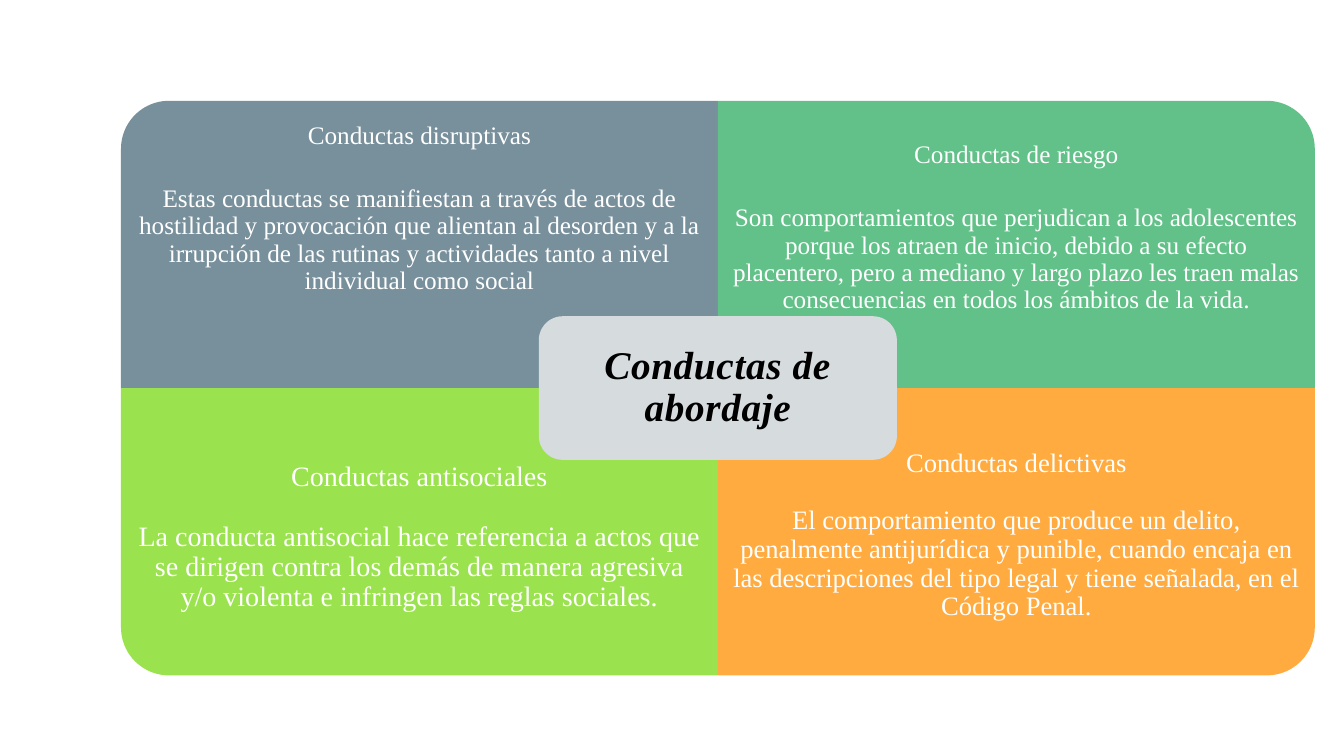
"""Build a slide with four kinds of conduct around a central title."""
import pptx
import pptx.dml.color
import pptx.enum.shapes
import pptx.enum.text
import pptx.util

SLIDE_WIDTH, SLIDE_HEIGHT = 13.33, 7.5
GRID_LEFT, GRID_TOP = 1.2, 1.0
CELL_WIDTH, CELL_HEIGHT = 5.92, 2.85
TEXT_SHARE = 0.75
CENTER_SHARES = (0.6, 0.5)
FONT = "Times New Roman"

CENTER = {"heading": "Conductas de abordaje", "fill": "D6DBDE", "size": 28}
CONDUCTS = [
    {"heading": "Conductas disruptivas",
     "body": "Estas conductas se manifiestan a través de actos de hostilidad y provocación que "
             "alientan al desorden y a la irrupción de las rutinas y actividades tanto a nivel "
             "individual como social",
     "cell": (0, 0), "turn": 270, "fill": "78909C",
     "size": 18, "gap": 26, "inset": 0.14, "shift": 0},
    {"heading": "Conductas de riesgo",
     "body": "Son comportamientos que perjudican a los adolescentes porque los atraen de inicio, "
             "debido a su efecto placentero, pero a mediano y largo plazo les traen malas "
             "consecuencias en todos los ámbitos de la vida.",
     "cell": (1, 0), "turn": 0, "fill": "61C188",
     "size": 18, "gap": 26, "inset": 0.14, "shift": 0.19},
    {"heading": "Conductas antisociales",
     "body": "La conducta antisocial hace referencia a actos que se dirigen contra los demás de "
             "manera agresiva y/o violenta e infringen las reglas sociales.",
     "cell": (0, 1), "turn": 180, "fill": "9BE24F",
     "size": 20, "gap": 21.5, "inset": 0.16, "shift": -0.3},
    {"heading": "Conductas delictivas",
     "body": "El comportamiento que produce un delito, penalmente antijurídica y punible, cuando "
             "encaja en las descripciones del tipo legal y tiene señalada, en el Código Penal.",
     "cell": (1, 1), "turn": 90, "fill": "FFAB40",
     "size": 19, "gap": 20.5, "inset": 0.15, "shift": -0.32},
]


def color(code):
    return pptx.dml.color.RGBColor.from_string(code)


def apply(target, formats):
    for name, value in formats.items():
        setattr(target, name, value)


def box(left, top, width, height):
    return [pptx.util.Inches(length) for length in (left, top, width, height)]


def add_panel(slide, preset, place, fill, turn=0):
    left, top, width, height = place
    if turn % 180:
        left, top = left + (width - height) / 2, top + (height - width) / 2
        width, height = height, width
    panel = slide.shapes.add_shape(preset, *box(left, top, width, height))
    panel.rotation = turn
    panel.shadow.inherit = False
    panel.fill.solid()
    panel.fill.fore_color.rgb = color(fill)
    panel.line.fill.background()


def add_words(slide, place, words, size, inset, ink, gap=0, **style):
    frame = slide.shapes.add_textbox(*box(*place)).text_frame
    margins = {f"margin_{side}": pptx.util.Inches(inset)
               for side in ("left", "top", "right", "bottom")}
    apply(frame, {"word_wrap": True,
                  "vertical_anchor": pptx.enum.text.MSO_ANCHOR.MIDDLE, **margins})
    for order, text in enumerate(words):
        paragraph = frame.add_paragraph() if order else frame.paragraphs[0]
        apply(paragraph, {"alignment": pptx.enum.text.PP_ALIGN.CENTER, "line_spacing": 0.9})
        if order:
            paragraph.space_before = pptx.util.Pt(gap)
        run = paragraph.add_run()
        run.text = text
        apply(run.font, {"name": FONT, "size": pptx.util.Pt(size), **style})
        run.font.color.rgb = color(ink)
    return frame


def main():
    deck = pptx.Presentation()
    apply(deck, {"slide_width": pptx.util.Inches(SLIDE_WIDTH),
                 "slide_height": pptx.util.Inches(SLIDE_HEIGHT)})
    slide = deck.slides.add_slide(deck.slide_layouts[6])
    presets = pptx.enum.shapes.MSO_SHAPE

    for conduct in CONDUCTS:
        column, row = conduct["cell"]
        left, top = GRID_LEFT + column * CELL_WIDTH, GRID_TOP + row * CELL_HEIGHT
        add_panel(slide, presets.ROUND_1_RECTANGLE, (left, top, CELL_WIDTH, CELL_HEIGHT),
                  conduct["fill"], conduct["turn"])
        text_top = top + row * (1 - TEXT_SHARE) * CELL_HEIGHT + conduct["shift"]
        add_words(slide, (left, text_top, CELL_WIDTH, TEXT_SHARE * CELL_HEIGHT),
                  (conduct["heading"], conduct["body"]), conduct["size"],
                  conduct["inset"], "FFFFFF", conduct["gap"])

    width, height = CENTER_SHARES[0] * CELL_WIDTH, CENTER_SHARES[1] * CELL_HEIGHT
    place = (GRID_LEFT + CELL_WIDTH - width / 2, GRID_TOP + CELL_HEIGHT - height / 2,
             width, height)
    add_panel(slide, presets.ROUNDED_RECTANGLE, place, CENTER["fill"])
    title = add_words(slide, place, [CENTER["heading"]], CENTER["size"], 0.19, "000000",
                      bold=True, italic=True)
    title.paragraphs[0].runs[0].font._element.set("spc", "50")
    deck.save("out.pptx")


if __name__ == "__main__":
    main()
